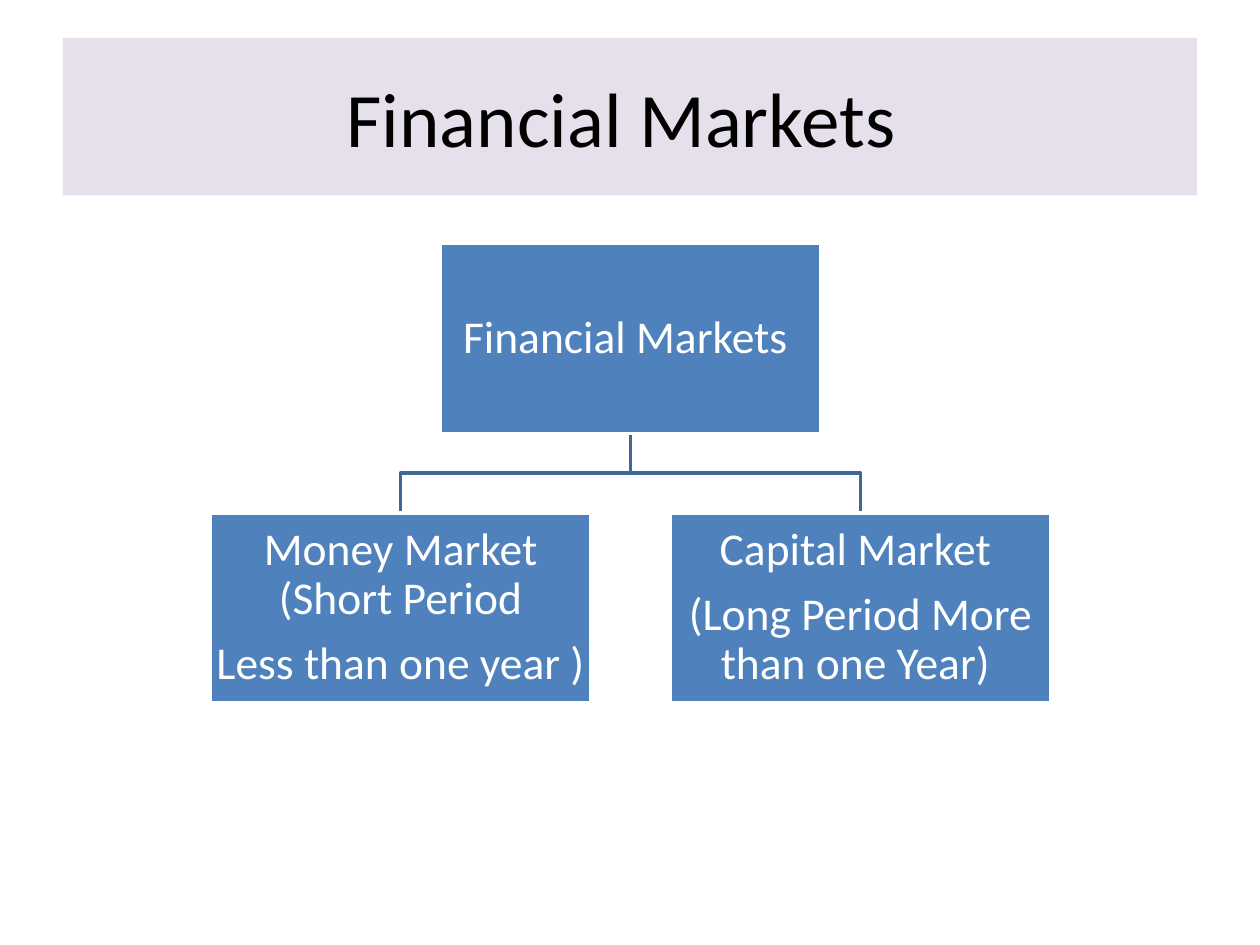
from pptx import Presentation
from pptx.dml.color import RGBColor
from pptx.enum import shapes, text
from pptx.util import Inches, Pt

FONT = "Calibri"
BOX_WIDTH, BOX_HEIGHT = 3.02, 1.51
BOX_GAP, LEVEL_GAP = 0.63, 0.63


def color(value):
    return RGBColor.from_string(value)


def add_box(slide, box, fill, paragraphs, size, font_color, line=None):
    shape = slide.shapes.add_shape(
        shapes.MSO_SHAPE.RECTANGLE, *[Inches(value) for value in box]
    )
    shape.shadow.inherit = False
    shape.fill.solid()
    shape.fill.fore_color.rgb = color(fill)
    if line:
        shape.line.color.rgb = color(line)
        shape.line.width = Pt(2)
    else:
        shape.line.fill.background()
    frame = shape.text_frame
    frame.word_wrap = True
    frame.vertical_anchor = text.MSO_ANCHOR.MIDDLE
    for index, words in enumerate(paragraphs):
        paragraph = frame.paragraphs[0] if index == 0 else frame.add_paragraph()
        paragraph.alignment = text.PP_ALIGN.CENTER
        run = paragraph.add_run()
        run.text = words
        run.font.name = FONT
        run.font.size = Pt(size)
        run.font.color.rgb = color(font_color)
    return frame


def add_title(slide, box):
    add_box(slide, box, "E6E0EC", ["Financial Markets "], 44, "000000")


def add_node(slide, box, paragraphs):
    frame = add_box(slide, box, "4F81BD", paragraphs, 26, "FFFFFF", "FFFFFF")
    frame.margin_left = frame.margin_right = Inches(0.02)
    frame.margin_top = frame.margin_bottom = Inches(0.02)
    for paragraph in frame.paragraphs:
        paragraph.line_spacing = 0.9
        paragraph.space_after = Pt(9.1)


def add_branch(slide, start, end):
    middle = (start[1] + end[1]) / 2
    points = [start, (start[0], middle), (end[0], middle), end]
    corners = [(Inches(x), Inches(y)) for x, y in points]
    builder = slide.shapes.build_freeform(*corners[0])
    builder.add_line_segments(corners[1:], close=False)
    shape = builder.convert_to_shape()
    shape.shadow.inherit = False
    shape.fill.background()
    shape.line.color.rgb = color("3F6797")
    shape.line.width = Pt(2)


def add_hierarchy(slide, box, root, children):
    left, top, width, height = box
    center = left + width / 2
    child_top = top + BOX_HEIGHT + LEVEL_GAP
    step = BOX_WIDTH + BOX_GAP
    child_centers = [
        center + (index - (len(children) - 1) / 2) * step
        for index in range(len(children))
    ]
    for child_center in reversed(child_centers):
        add_branch(slide, (center, top + BOX_HEIGHT), (child_center, child_top))
    nodes = [(center, top, root)]
    nodes += [(x, child_top, words) for x, words in zip(child_centers, children)]
    for node_center, node_top, words in nodes:
        node_box = (node_center - BOX_WIDTH / 2, node_top, BOX_WIDTH, BOX_HEIGHT)
        add_node(slide, node_box, words)


def main():
    presentation = Presentation()
    presentation.slide_width = Inches(10)
    presentation.slide_height = Inches(7.5)
    slide = presentation.slides.add_slide(presentation.slide_layouts[6])
    add_title(slide, (0.5, 0.3, 9, 1.25))
    add_hierarchy(
        slide,
        (1.67, 1.93, 6.67, 3.65),
        ["Financial Markets "],
        [
            ["Money Market (Short Period", "Less than one year ) "],
            ["Capital Market ", "(Long Period More than one Year) "],
        ],
    )
    presentation.save("out.pptx")


if __name__ == "__main__":
    main()
